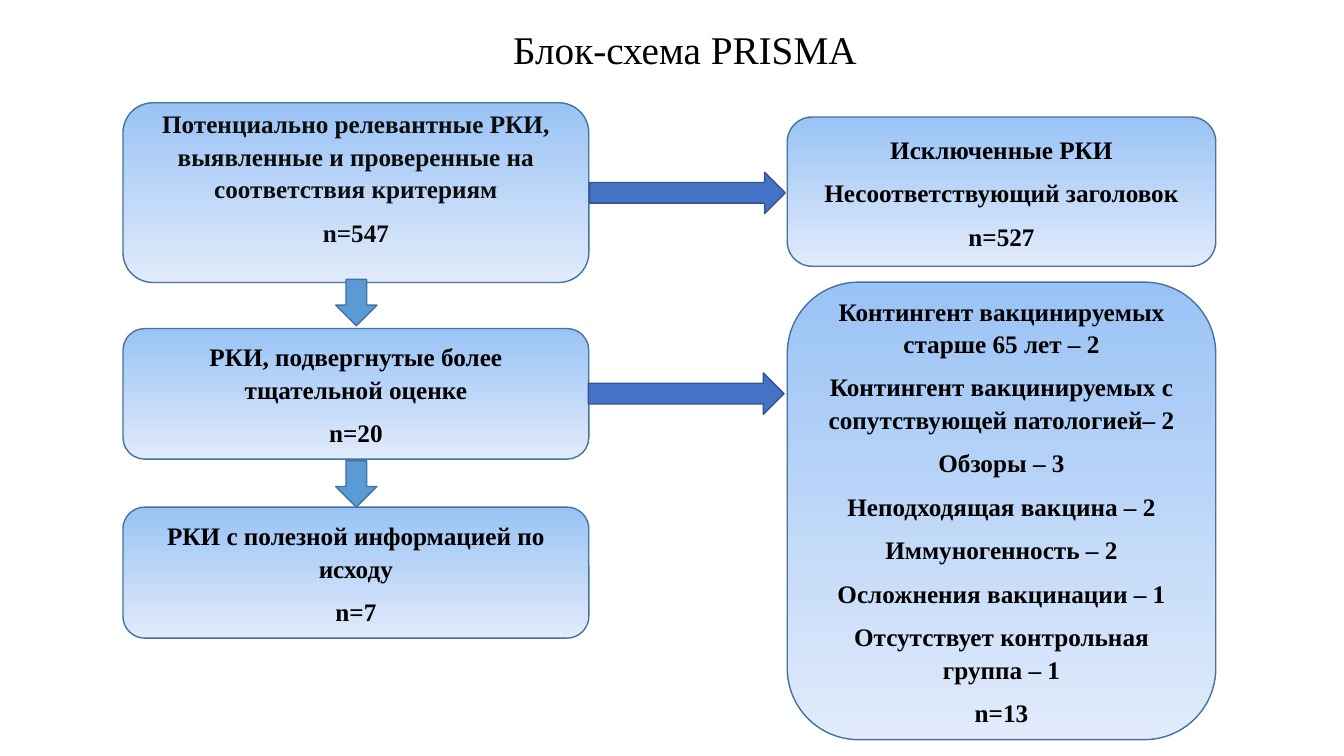
from pptx import Presentation
from pptx.dml.color import RGBColor as RGB
from pptx.enum.shapes import MSO_SHAPE as Kind
from pptx.enum.text import MSO_ANCHOR as Anchor, PP_ALIGN as Align
from pptx.util import Cm, Pt

hues = {
    "ink": "000000", "soft": "0D0D0D",
    "top": "9AC3F5", "base": "E1EBFB", "edge": "43739E",
    "side": "4472C4", "rim": "325491", "down": "5B9BD5",
}


def hue(name):
    return RGB.from_string(hues[name])


def write(frame, lines, ink, font, para):
    frame.word_wrap = True
    frame.vertical_anchor = Anchor.MIDDLE
    for i, line in enumerate(lines):
        p = frame.paragraphs[0] if i == 0 else frame.add_paragraph()
        for key, val in para.items():
            setattr(p, key, val)
        run = p.add_run()
        run.text = line
        run.font.color.rgb = hue(ink)
        for key, val in font.items():
            setattr(run.font, key, val)


deck = Presentation()
deck.slide_width, deck.slide_height = Cm(33.87), Cm(19.05)
slide = deck.slides.add_slide(deck.slide_layouts[5])
shapes = slide.shapes

title = shapes.title
place = {"left": 0.66, "top": 0.08, "width": 33.2, "height": 2.46}
for key, val in place.items():
    setattr(title, key, Cm(val))
write(title.text_frame, ["Блок-схема PRISMA"], "ink",
      {"name": "Times New Roman", "size": Pt(28)},
      {"alignment": Align.CENTER, "line_spacing": 0.9})

font = {"name": "Times New Roman", "size": Pt(18), "bold": True}
para = {"alignment": Align.CENTER, "line_spacing": 1.07, "space_after": Pt(8)}
left, right = (3.1, 11.74), (19.84, 10.8)
boxes = [
    (left, 2.59, 4.53, "soft", 0.92, [
        "Потенциально релевантные РКИ, выявленные и проверенные на соответствия критериям",
        "n=547"]),
    (left, 8.28, 3.29, "ink", 0.13, [
        "РКИ, подвергнутые более тщательной оценке", "n=20"]),
    (left, 12.78, 3.3, "ink", 0.13, [
        "РКИ с полезной информацией по исходу", "n=7"]),
    (right, 2.95, 3.76, "ink", 0.13, [
        "Исключенные РКИ", "Несоответствующий заголовок", "n=527"]),
    (right, 7.11, 11.53, "ink", 0.13, [
        "Контингент вакцинируемых старше 65 лет – 2",
        "Контингент вакцинируемых с сопутствующей патологией– 2",
        "Обзоры – 3",
        "Неподходящая вакцина – 2",
        "Иммуногенность – 2",
        "Осложнения вакцинации – 1",
        "Отсутствует контрольная группа – 1",
        "n=13"]),
]
for (x, wide), y, high, ink, pad, lines in boxes:
    box = shapes.add_shape(Kind.ROUNDED_RECTANGLE, Cm(x), Cm(y), Cm(wide), Cm(high))
    box.shadow.inherit = False
    box.fill.gradient()
    box.fill.gradient_angle = 270
    for stop, name, pos in zip(box.fill.gradient_stops, ("top", "base"), (0, 1)):
        stop.color.rgb = hue(name)
        stop.position = pos
    box.line.color.rgb = hue("edge")
    box.line.width = Pt(1)
    box.text_frame.margin_bottom = Cm(pad)
    write(box.text_frame, lines, ink, font, para)

across = (Kind.RIGHT_ARROW, 4.93, 1.04, "side", "rim")
below = (Kind.DOWN_ARROW, 1.04, 1.17, "down", "edge")
arrows = [(across, 14.86, 4.34), (across, 14.83, 9.4),
          (below, 8.46, 7.04), (below, 8.46, 11.61)]
for (kind, wide, high, fill, edge), x, y in arrows:
    arrow = shapes.add_shape(kind, Cm(x), Cm(y), Cm(wide), Cm(high))
    arrow.shadow.inherit = False
    arrow.fill.solid()
    arrow.fill.fore_color.rgb = hue(fill)
    arrow.line.color.rgb = hue(edge)
    arrow.line.width = Pt(1)

deck.save("out.pptx")
